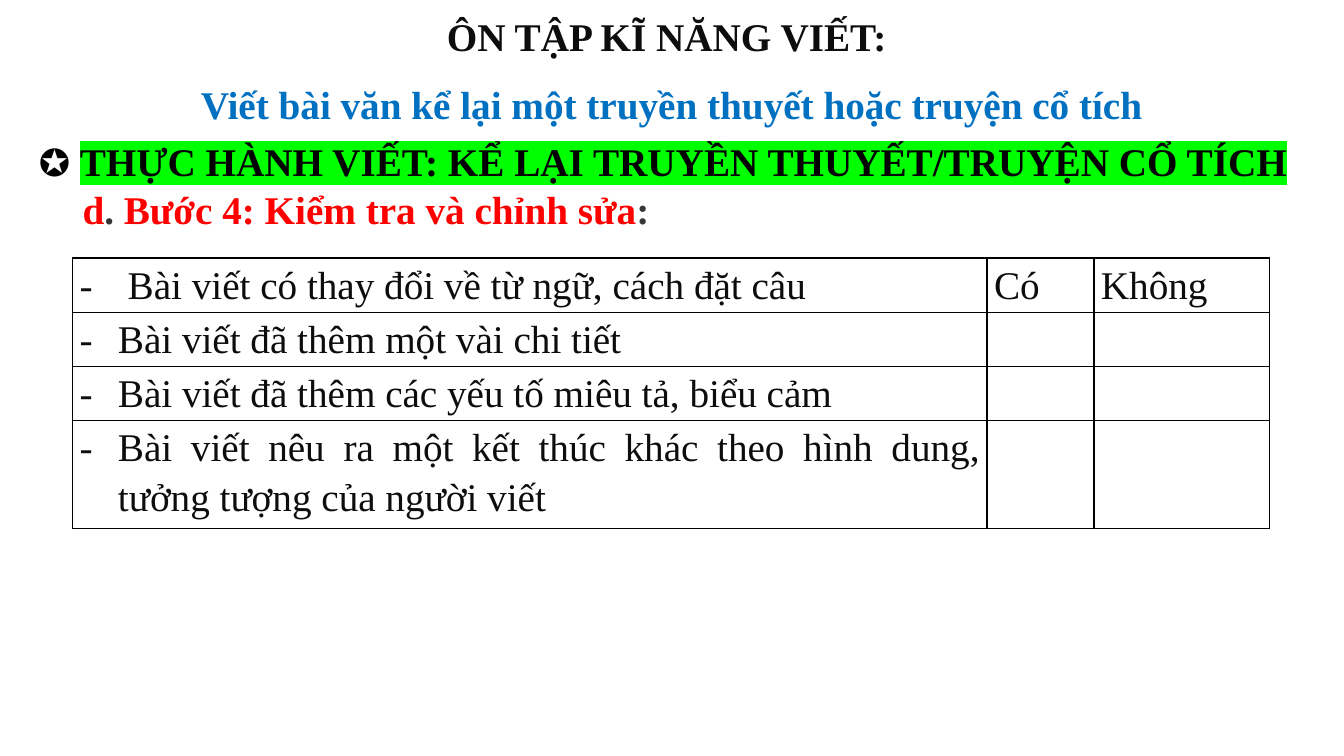
import pptx
import pptx.util
import pptx.dml.color
import pptx.enum.text
import pptx.oxml
import pptx.oxml.ns

Inches, Pt = pptx.util.Inches, pptx.util.Pt
RGBColor = pptx.dml.color.RGBColor
ALIGN = pptx.enum.text.PP_ALIGN

INK = RGBColor(0x0D, 0x0D, 0x0D)
BLACK = RGBColor(0, 0, 0)
BLUE = RGBColor(0x00, 0x70, 0xC0)
RED = RGBColor(0xFF, 0, 0)
GREY = RGBColor(0x36, 0x36, 0x36)
GREEN = RGBColor(0, 0xFF, 0)

FONT = {"name": "Times New Roman", "size": Pt(28)}
JUSTIFIED = {"alignment": ALIGN.JUSTIFY, "line_spacing": 1.15}
CENTRED = {"alignment": ALIGN.CENTER, "line_spacing": 1.15, "space_after": Pt(10)}

# Each span: text, colour, bold, highlight
TITLE = [
    [("ÔN TẬP KĨ NĂNG VIẾT: ", INK, True, None)],
    [("Viết bài văn kể lại một truyền thuyết hoặc truyện cổ tích", BLUE, True, None)],
]
PRACTICE = [[
    ("✪ ", BLACK, False, None),
    ("THỰC HÀNH VIẾT: KỂ LẠI TRUYỀN THUYẾT/TRUYỆN CỔ TÍCH", BLACK, True, GREEN),
]]
STEP = [[
    ("d", RED, True, None),
    (". ", GREY, True, None),
    ("Bước 4: Kiểm tra và chỉnh sửa", RED, True, None),
    (":", GREY, True, None),
]]
CHECKLIST = [
    (" Bài viết có thay đổi về từ ngữ, cách đặt câu", "Có", "Không"),
    ("Bài viết đã thêm một vài chi tiết", "", ""),
    ("Bài viết đã thêm các yếu tố miêu tả, biểu cảm", "", ""),
    ("Bài viết nêu ra một kết thúc khác theo hình dung, tưởng tượng của người viết", "", ""),
]

LEFT, WIDTH = 0.72, 11.88
# Each box: left, top, width, height, wrap, paragraph format, content
BOXES = [
    (LEFT, 0, WIDTH, 1.33, True, CENTRED, TITLE),
    (0.29, 1.24, 12.75, 0.61, False, JUSTIFIED, PRACTICE),
    (LEFT, 1.72, WIDTH, 0.6, True, JUSTIFIED, STEP),
]
TABLE_TOP, LINE_HEIGHT = 2.56, 0.535
COLUMNS = (9.07, 1.06, 1.74)
ROW_LINES = (1, 1, 1, 2)
BULLET_INDENT = Inches(0.38)


def set_all(target, values):
    for name, value in values.items():
        setattr(target, name, value)


def add_xml(parent, tag, **attributes):
    element = pptx.oxml.parse_xml(f"<a:{tag} {pptx.oxml.ns.nsdecls('a')}/>")
    for name, value in attributes.items():
        element.set(name, str(value))
    parent.append(element)
    return element


def add_span(para, text, colour, bold, highlight):
    span = para.add_run()
    span.text = text
    set_all(span.font, {**FONT, "bold": bold})
    span.font.color.rgb = colour
    if highlight is not None:
        properties = span.font._element
        mark = add_xml(properties, "highlight")
        add_xml(mark, "srgbClr", val=highlight)
        properties.find(pptx.oxml.ns.qn("a:solidFill")).addnext(mark)


def add_text(page, left, top, width, height, wrap, layout, paragraphs):
    box = page.shapes.add_textbox(*map(Inches, (left, top, width, height)))
    frame = box.text_frame
    frame.word_wrap = wrap
    for index, spans in enumerate(paragraphs):
        para = frame.add_paragraph() if index else frame.paragraphs[0]
        set_all(para, layout)
        for span in spans:
            add_span(para, *span)


def add_bullet(para):
    properties = para._p.get_or_add_pPr()
    properties.set("marL", str(BULLET_INDENT))
    properties.set("indent", str(-BULLET_INDENT))
    add_xml(properties, "buFont", typeface=FONT["name"])
    add_xml(properties, "buChar", char="-")


def add_borders(cell):
    properties = cell._tc.get_or_add_tcPr()
    for position, side in enumerate(("lnL", "lnR", "lnT", "lnB")):
        line = add_xml(properties, side, w=Pt(1))
        add_xml(add_xml(line, "solidFill"), "srgbClr", val=BLACK)
        properties.insert(position, line)


def add_checklist(page):
    height = LINE_HEIGHT * sum(ROW_LINES)
    table = page.shapes.add_table(
        len(CHECKLIST), len(COLUMNS),
        *map(Inches, (LEFT, TABLE_TOP, WIDTH, height))).table
    set_all(table, {"first_row": False, "horz_banding": False})
    for column, width in zip(table.columns, COLUMNS):
        column.width = Inches(width)
    margins = {"margin_left": Inches(0.07), "margin_right": Inches(0.07),
               "margin_top": 0, "margin_bottom": 0}
    for row, lines, texts in zip(table.rows, ROW_LINES, CHECKLIST):
        row.height = Inches(LINE_HEIGHT * lines)
        for index, (cell, text) in enumerate(zip(row.cells, texts)):
            set_all(cell, margins)
            cell.fill.background()
            add_borders(cell)
            para = cell.text_frame.paragraphs[0]
            set_all(para, JUSTIFIED)
            if index == 0:
                add_bullet(para)
            if text:
                add_span(para, text, INK, False, None)


def main():
    deck = pptx.Presentation()
    set_all(deck, {"slide_width": Inches(13.33), "slide_height": Inches(7.5)})
    page = deck.slides.add_slide(deck.slide_layouts[6])
    for box in BOXES:
        add_text(page, *box)
    add_checklist(page)
    deck.save("out.pptx")


if __name__ == "__main__":
    main()
